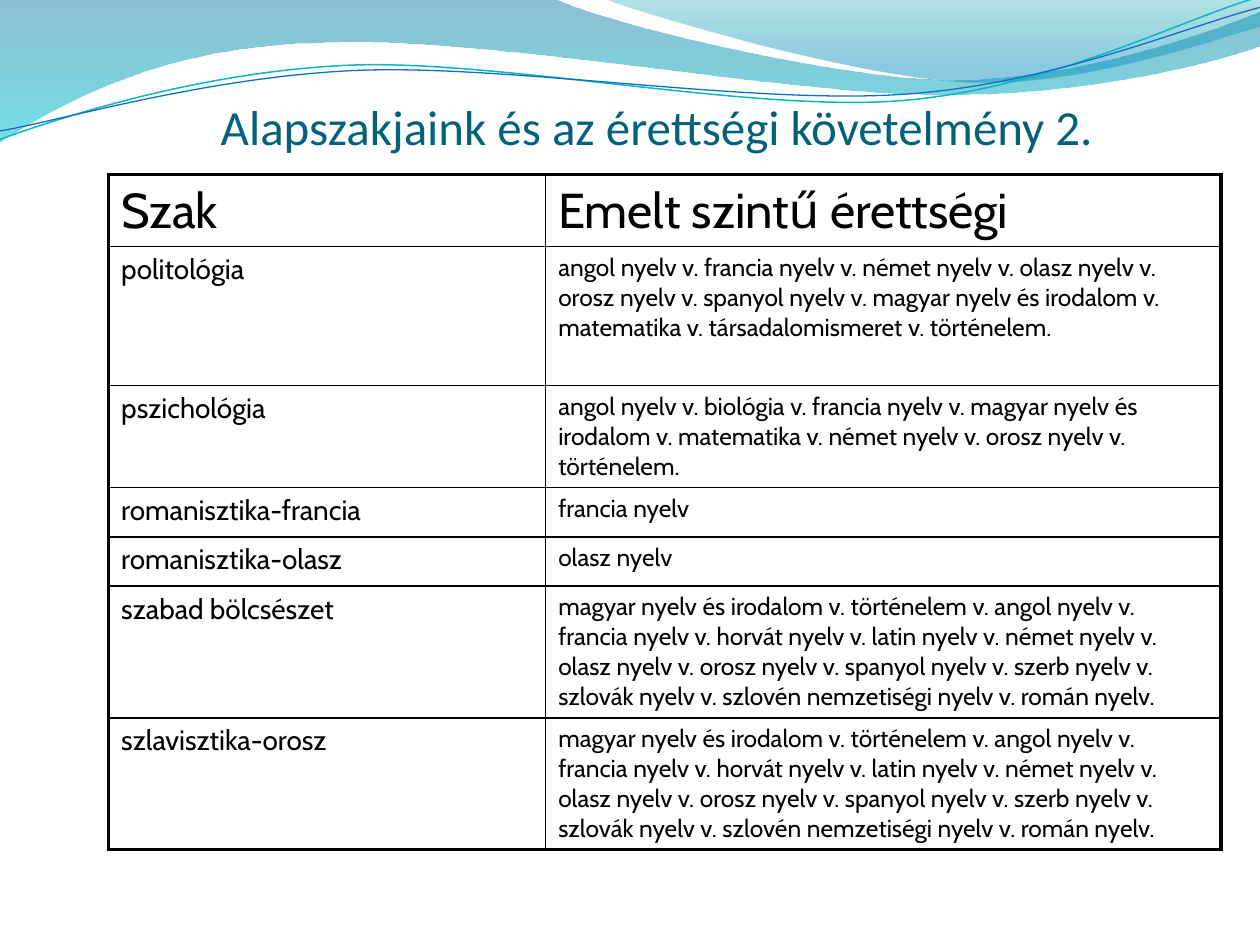
from dataclasses import dataclass
from typing import Optional

from lxml.etree import SubElement
from pptx import Presentation
from pptx.dml.color import RGBColor
from pptx.enum.text import MSO_ANCHOR, MSO_AUTO_SIZE, PP_ALIGN
from pptx.oxml import parse_xml
from pptx.oxml.ns import nsdecls, qn
from pptx.shapes.autoshape import Shape
from pptx.slide import Slide
from pptx.table import _Cell
from pptx.util import Cm, Pt

Point = tuple[float, float]
Segment = tuple[Point, ...]


@dataclass(frozen=True)
class Theme:
    title_font: str = "Calibri"
    table_font: str = "Cabin"
    title_color: str = "04617B"
    ink: str = "000000"
    heading_size: int = 28
    subject_size: int = 16
    exam_size: int = 14
    outer_border: float = 2.25
    inner_border: float = 1


@dataclass(frozen=True)
class Stop:
    position: float
    color: str
    opacity: int


@dataclass(frozen=True)
class Wave:
    start: Point
    segments: list[Segment]
    stops: tuple[Stop, ...] = ()
    line_color: Optional[str] = None
    line_width: float = 0
    rotation: float = 0


@dataclass(frozen=True)
class Course:
    subject: str
    exams: str
    height: float


THEME = Theme()

WAVES = [
    Wave(
        (0, -0.03),
        [
            ((11.18, -0.03),),
            ((12.09, 0.43), (16.87, 1.6), (19.25, 1.6)),
            ((21.67, 1.6), (24.33, 0.66), (25.4, 0.23)),
            ((25.43, 0.91),),
            ((24.97, 1.12), (22.1, 1.93), (18.95, 1.91)),
            ((15.8, 1.91), (9.7, 0.71), (6.53, 0.86)),
            ((3.28, 0.89), (1.17, 2.11), (-0.03, 2.87)),
        ],
        stops=(Stop(0, "0074A1", 45), Stop(1, "00C6CF", 55)),
    ),
    Wave(
        (12.17, -0.03),
        [
            ((12.93, 0.28), (17.32, 1.57), (19.53, 1.65)),
            ((21.74, 1.75), (24.41, 0.81), (25.4, 0.53)),
            ((25.4, 0),),
        ],
        stops=(Stop(0, "00A1A9", 30), Stop(0.8, "008BBF", 45)),
    ),
    Wave(
        (-0.05, 2.21),
        [
            ((1.19, 1.83), (4.01, 1.04), (7.05, 1.05)),
            ((10.05, 1.07), (15.02, 2.37), (18.08, 2.29)),
            ((21.13, 2.2), (23.86, 0.91), (25.4, 0.55)),
        ],
        line_color="0AB8BF",
        line_width=0.85,
        rotation=357.3,
    ),
    Wave(
        (-0.04, 2.04),
        [
            ((1.16, 1.9), (4.17, 1.15), (7.2, 1.16)),
            ((10.25, 1.18), (15.13, 2.23), (18.19, 2.16)),
            ((21.22, 2.1), (23.93, 1.06), (25.45, 0.75)),
        ],
        line_color="0F6FC6",
        line_width=0.75,
        rotation=357.3,
    ),
]

HUMANITIES_EXAMS = (
    "magyar nyelv és irodalom v. történelem v. angol nyelv v. francia nyelv v. "
    "horvát nyelv v. latin nyelv v. német nyelv v. olasz nyelv v. orosz nyelv v. "
    "spanyol nyelv v. szerb nyelv v. szlovák nyelv v. szlovén nemzetiségi nyelv v. "
    "román nyelv."
)
COURSES = [
    Course("Szak", "Emelt szintű érettségi", 1.45),
    Course(
        "politológia",
        "angol nyelv v. francia nyelv v. német nyelv v. olasz nyelv v. orosz nyelv v. "
        "spanyol nyelv v. magyar nyelv és irodalom v. matematika v. "
        "társadalomismeret v. történelem.",
        2.8,
    ),
    Course(
        "pszichológia",
        "angol nyelv v. biológia v. francia nyelv v. magyar nyelv és irodalom v. "
        "matematika v. német nyelv v. orosz nyelv v. történelem.",
        2.05,
    ),
    Course("romanisztika-francia", "francia nyelv", 0.99),
    Course("romanisztika-olasz", "olasz nyelv", 0.99),
    Course("szabad bölcsészet", HUMANITIES_EXAMS, 2.65),
    Course("szlavisztika-orosz", HUMANITIES_EXAMS, 2.65),
]
COLUMN_WIDTHS = (8.81, 13.61)


def bend_segments(shape: Shape, segments: list[Segment]) -> None:
    lines = list(shape.element.spPr.iter(qn("a:lnTo")))
    for line, segment in zip(lines, segments):
        if len(segment) == 1:
            continue
        curve = parse_xml(f'<a:cubicBezTo {nsdecls("a")}/>')
        for x, y in segment:
            SubElement(curve, qn("a:pt"), x=str(Cm(x) - shape.left), y=str(Cm(y) - shape.top))
        line.getparent().replace(line, curve)


def fill_gradient(shape: Shape, stops: tuple[Stop, ...]) -> None:
    shape.fill.gradient()
    shape.fill.gradient_angle = 270
    for target, stop in zip(shape.fill.gradient_stops, stops):
        target.position = stop.position
        target.color.rgb = RGBColor.from_string(stop.color)
    for color, stop in zip(shape.element.spPr.iter(qn("a:srgbClr")), stops):
        SubElement(color, qn("a:alpha"), val=str(stop.opacity * 1000))


def draw_wave(page: Slide, wave: Wave) -> None:
    builder = page.shapes.build_freeform(Cm(wave.start[0]), Cm(wave.start[1]))
    ends = [(Cm(segment[-1][0]), Cm(segment[-1][1])) for segment in wave.segments]
    builder.add_line_segments(ends, close=bool(wave.stops))
    shape = builder.convert_to_shape()
    bend_segments(shape, wave.segments)
    shape.rotation = wave.rotation
    shape.shadow.inherit = False
    if wave.stops:
        fill_gradient(shape, wave.stops)
        shape.line.fill.background()
    else:
        shape.fill.background()
        shape.line.color.rgb = RGBColor.from_string(wave.line_color)
        shape.line.width = Pt(wave.line_width)


def write_title(page: Slide, text: str) -> None:
    title = page.shapes.title
    title.left, title.top, title.width, title.height = Cm(4.45), Cm(0.84), Cm(20.95), Cm(2.29)
    frame = title.text_frame
    frame.text = text
    frame.auto_size = MSO_AUTO_SIZE.NONE
    frame.vertical_anchor = MSO_ANCHOR.BOTTOM
    frame.margin_left = frame.margin_right = frame.margin_bottom = 0
    para = frame.paragraphs[0]
    para.alignment = PP_ALIGN.LEFT
    para.font.name = THEME.title_font
    para.font.size = Pt(THEME.heading_size)
    para.font.color.rgb = RGBColor.from_string(THEME.title_color)


def set_borders(cell: _Cell, outer_sides: dict[str, bool]) -> None:
    properties = cell._tc.get_or_add_tcPr()
    for index, (side, outer) in enumerate(outer_sides.items()):
        width = Pt(THEME.outer_border if outer else THEME.inner_border)
        border = parse_xml(
            f'<a:ln{side} {nsdecls("a")} w="{width}"><a:solidFill>'
            f'<a:srgbClr val="{THEME.ink}"/></a:solidFill></a:ln{side}>'
        )
        properties.insert(index, border)


def write_cell(cell: _Cell, text: str, size: int) -> None:
    cell.fill.background()
    cell.text = text
    font = cell.text_frame.paragraphs[0].font
    font.name = THEME.table_font
    font.size = Pt(size)
    font.color.rgb = RGBColor.from_string(THEME.ink)


def draw_courses(page: Slide, courses: list[Course]) -> None:
    size = Cm(sum(COLUMN_WIDTHS)), Cm(sum(course.height for course in courses))
    table = page.shapes.add_table(len(courses), 2, Cm(2.19), Cm(3.52), *size).table
    table.first_row = table.horz_banding = False
    for column, width in zip(table.columns, COLUMN_WIDTHS):
        column.width = Cm(width)
    last = len(courses) - 1
    for row, course in enumerate(courses):
        table.rows[row].height = Cm(course.height)
        sizes = (THEME.subject_size, THEME.exam_size) if row else (THEME.heading_size,) * 2
        for column, text in enumerate((course.subject, course.exams)):
            cell = table.cell(row, column)
            write_cell(cell, text, sizes[column])
            set_borders(cell, {"L": column == 0, "R": column == 1, "T": row == 0, "B": row == last})


def main() -> None:
    deck = Presentation()
    deck.slide_width, deck.slide_height = Cm(25.4), Cm(19.05)
    page = deck.slides.add_slide(deck.slide_layouts.get_by_name("Title Only"))
    for wave in WAVES:
        draw_wave(page, wave)
    write_title(page, "Alapszakjaink és az érettségi követelmény 2.")
    draw_courses(page, COURSES)
    deck.save("out.pptx")


if __name__ == "__main__":
    main()
